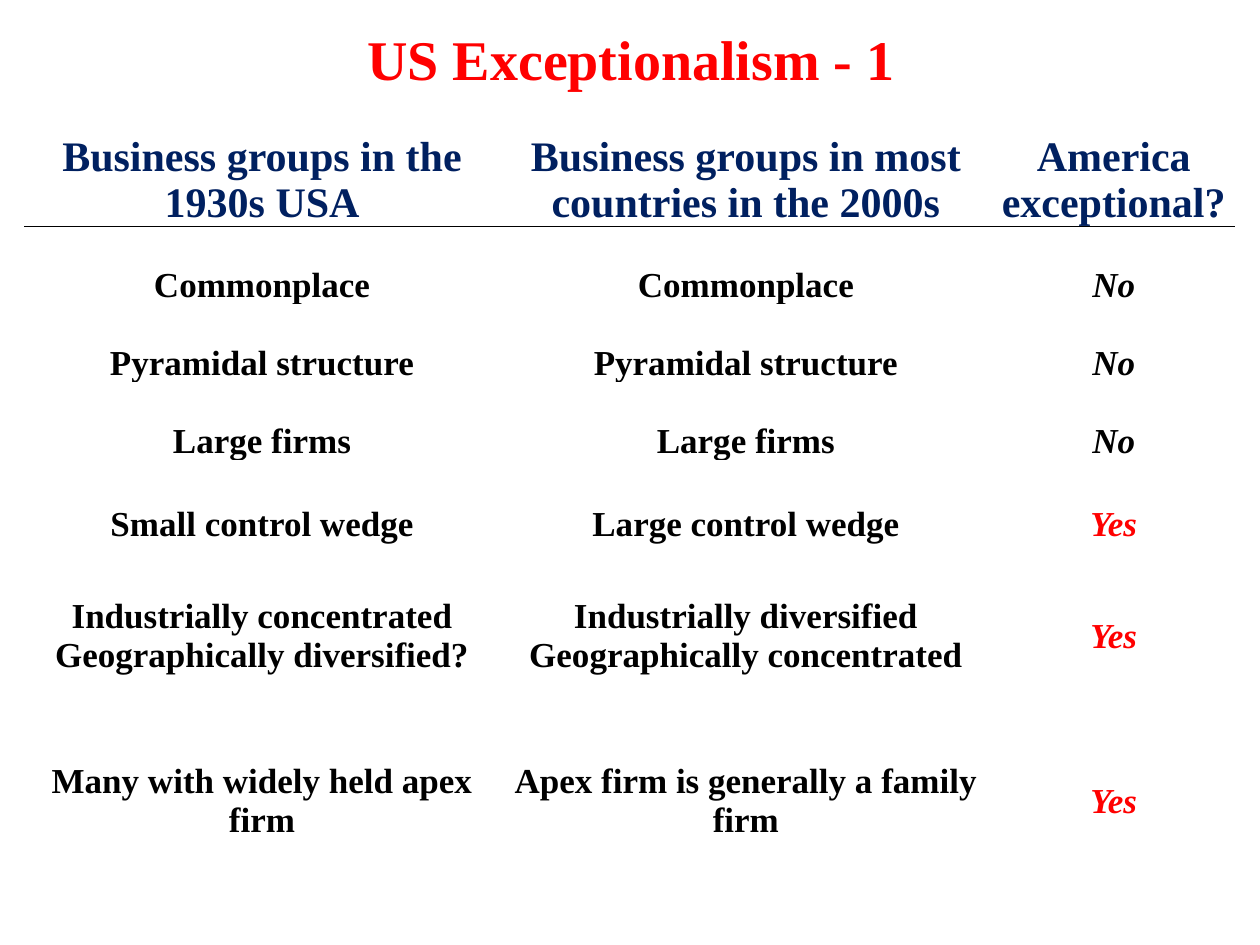
from lxml import etree
from pptx import Presentation
from pptx import util as u
from pptx.dml.color import RGBColor
from pptx.enum import text
from pptx.oxml import ns

FONT = "Times New Roman"
RED, NAVY, BLACK, WHITE = "FF0000", "002060", "000000", "FFFFFF"


def style(paragraph, size, color, italic=False):
    paragraph.alignment = text.PP_ALIGN.CENTER
    for run in paragraph.runs:
        font = run.font
        font.name, font.size = FONT, u.Pt(size)
        font.bold, font.italic = True, italic
        font.color.rgb = RGBColor.from_string(color)


def set_borders(cell, **colors):
    """Draw 1 pt cell edges; they must precede the fill in tcPr."""
    props = cell._tc.get_or_add_tcPr()
    for place, (side, color) in enumerate(colors.items()):
        edge = etree.Element(ns.qn(f"a:ln{side}"), w=str(u.Pt(1)))
        fill = etree.SubElement(edge, ns.qn("a:solidFill"))
        etree.SubElement(fill, ns.qn("a:srgbClr"), val=color)
        props.insert(place, edge)


prs = Presentation()
prs.slide_width, prs.slide_height = u.Inches(10), u.Inches(7.5)
slide = prs.slides.add_slide(prs.slide_layouts[5])

# Title
title = slide.shapes.title
title.left, title.top = u.Inches(0.02), 0
title.width, title.height = u.Inches(9.98), u.Inches(0.92)
title.text_frame.text = "US Exceptionalism - 1"
title.text_frame.vertical_anchor = text.MSO_ANCHOR.MIDDLE
style(title.text_frame.paragraphs[0], 32, RED)

# Comparison: row height, space above the text, then the three columns
comparison = [
    (1.04, 0, "Business groups in the 1930s USA",
     "Business groups in most countries in the 2000s", "America exceptional?"),
    (0.61, 0.31, "Commonplace", "Commonplace", "No"),
    (0.61, 0.31, "Pyramidal structure", "Pyramidal structure", "No"),
    (0.61, 0.31, "Large firms", "Large firms", "No"),
    (0.71, 0.31, "Small control wedge", "Large control wedge", "Yes"),
    (1.37, 0, "Industrially concentrated\nGeographically diversified?",
     "Industrially diversified\nGeographically concentrated", "Yes"),
    (1.25, 0, "Many with widely held apex firm",
     "Apex firm is generally a family firm", "Yes"),
]
col_widths = [3.76, 3.92, 1.92]
table = slide.shapes.add_table(
    len(comparison), len(col_widths), u.Inches(0.2), u.Inches(0.76),
    u.Inches(sum(col_widths)), u.Inches(sum(row[0] for row in comparison))).table
table.horz_banding = False
for column, width in zip(table.columns, col_widths):
    column.width = u.Inches(width)

for r, (height, space_above, *entries) in enumerate(comparison):
    table.rows[r].height = u.Inches(height)
    is_header = r == 0
    for c, entry in enumerate(entries):
        cell = table.cell(r, c)
        cell.text = entry
        cell.margin_left = cell.margin_right = cell.margin_bottom = 0
        cell.margin_top = u.Inches(space_above)
        cell.vertical_anchor = (text.MSO_ANCHOR.BOTTOM if is_header
                                else text.MSO_ANCHOR.MIDDLE)
        cell.fill.solid()
        cell.fill.fore_color.rgb = RGBColor.from_string(WHITE)
        set_borders(cell, L=WHITE, R=WHITE, T=BLACK if r == 1 else WHITE,
                    B=BLACK if is_header else WHITE)
        color = NAVY if is_header else RED if entry == "Yes" else BLACK
        is_verdict = c == 2 and not is_header
        for paragraph in cell.text_frame.paragraphs:
            style(paragraph, 24 if is_header else 20, color, is_verdict)

prs.save("out.pptx")
